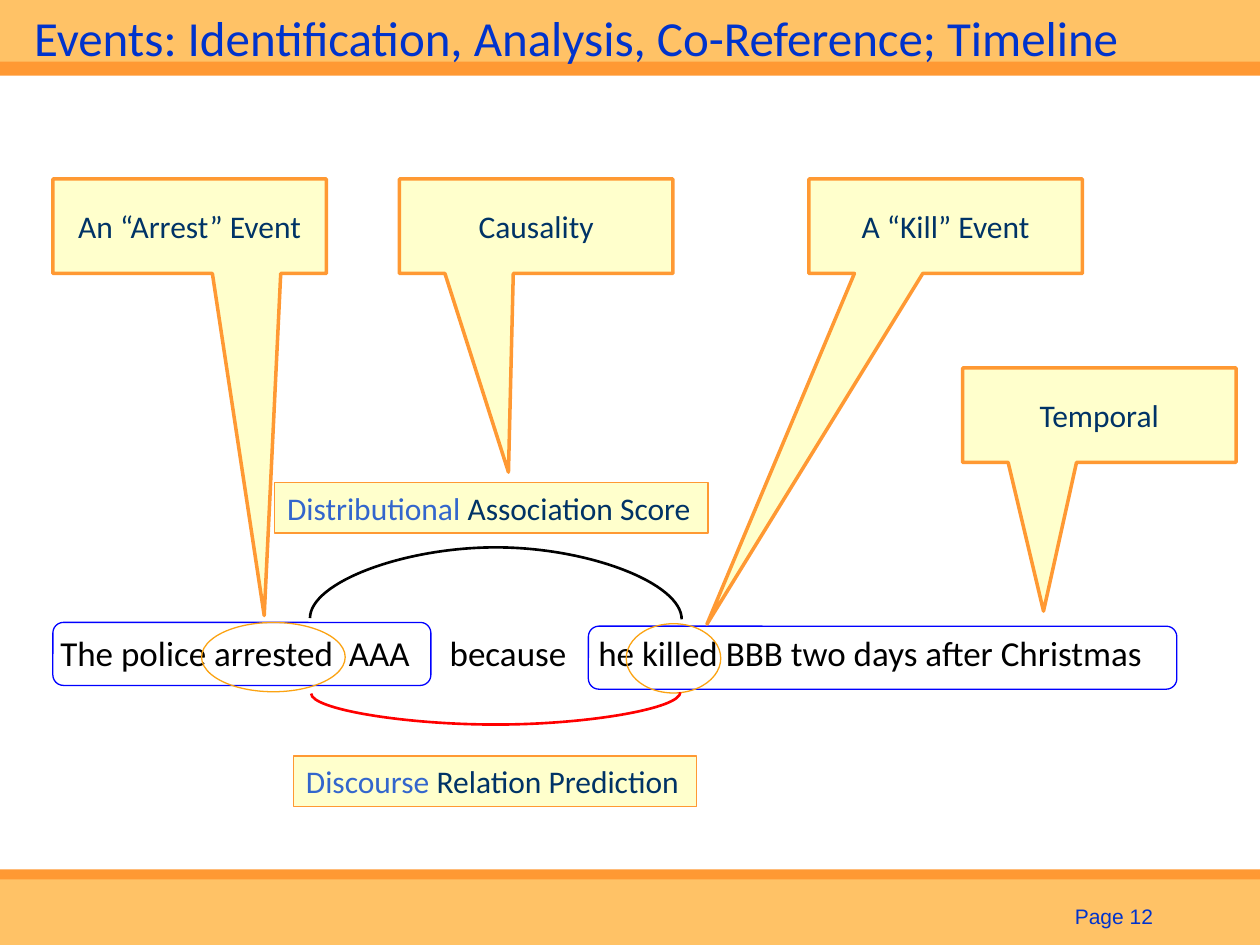
from pptx import Presentation
from pptx.dml.color import RGBColor
from pptx.enum import shapes, text
from pptx.oxml import ns, xmlchemy
from pptx.util import Inches, Pt

ORANGE = RGBColor(0xFF, 0x99, 0x33)
LIGHT_ORANGE = RGBColor(0xFF, 0xC2, 0x66)
GOLD = RGBColor(0xFB, 0xA3, 0x13)
CREAM = RGBColor(0xFF, 0xFF, 0xCC)
TITLE_BLUE = RGBColor(0x00, 0x33, 0xCC)
SPAN_BLUE = RGBColor(0x00, 0x00, 0xFF)
LABEL_BLUE = RGBColor(0x33, 0x66, 0xCC)
NAVY = RGBColor(0x00, 0x33, 0x66)
RED = RGBColor(0xFF, 0x00, 0x00)
BLACK = RGBColor(0x00, 0x00, 0x00)

KIND = shapes.MSO_SHAPE
ALIGN = text.PP_ALIGN
ANCHOR = text.MSO_ANCHOR

# Content: positions and sizes in inches
TITLE = "Events: Identification, Analysis, Co-Reference; Timeline"
SENTENCE = "The police arrested\tAAA\tbecause\the killed BBB two days after Christmas"
SENTENCE_TABS = [2.29, 3.09, 4.27]
PAGE_NUMBER = "Page 12"
BANDS = [  # top, height, colour
    (6.9, 0.6, ORANGE), (0, 0.6, ORANGE),
    (0, 0.49, LIGHT_ORANGE), (6.98, 0.52, LIGHT_ORANGE),
]
MARKS = [  # kind, left, top, width, height, line colour
    (KIND.ROUNDED_RECTANGLE, 0.42, 4.94, 3, 0.5, SPAN_BLUE),
    (KIND.ROUNDED_RECTANGLE, 4.67, 4.97, 4.67, 0.5, SPAN_BLUE),
    (KIND.OVAL, 1.6, 4.94, 1.14, 0.55, GOLD),
    (KIND.OVAL, 4.97, 4.95, 0.75, 0.55, GOLD),
]
CALLOUT_SIZE = (2.17, 0.75)
CALLOUTS = [  # words, left, top, tip offset as a share of the size
    ("A “Kill” Event", 6.42, 1.42, (-0.873, 4.212)),
    ("An “Arrest” Event", 0.42, 1.42, (0.273, 4.12)),
    ("Causality", 3.17, 1.42, (-0.101, 2.603)),
    ("Temporal", 7.64, 2.92, (-0.204, 2.074)),
]
LABELS = [  # first words, other words, left, top, width
    ("Distributional ", "Association Score", 2.18, 3.83, 3.44),
    ("Discourse ", "Relation Prediction", 2.33, 6, 3.2),
]
ARCS = [  # left, right, end height, bulge (negative is upward), colour
    (2.46, 5.41, 4.91, -0.57, BLACK),
    (2.47, 5.4, 5.5, 0.25, RED),
]
ARC_DEPTH = 0.01


def add_span(para, words, size, color, font="Calibri"):
    span = para.add_run()
    span.text = words
    span.font.name, span.font.size = font, Pt(size)
    span.font.color.rgb = color


def add_box(page, kind, place, fill=None, line=None, weight=0.75):
    box = page.shapes.add_shape(kind, *map(Inches, place))
    box.shadow.inherit = False
    if fill is None:
        box.fill.background()
    else:
        box.fill.solid()
        box.fill.fore_color.rgb = fill
    if line is None:
        box.line.fill.background()
    else:
        box.line.color.rgb = line
        box.line.width = Pt(weight)
    return box


def add_text(page, place, anchor):
    box = page.shapes.add_textbox(*map(Inches, place))
    box.text_frame.word_wrap = True
    box.text_frame.vertical_anchor = anchor
    return box.text_frame.paragraphs[0]


def add_arc(page, left, right, level, bulge, color):
    # A thin upright curve, turned a quarter so that it spans left to right
    length, middle = right - left, (left + right) / 2
    x, y = middle - ARC_DEPTH / 2, level - length / 2
    arc = page.shapes.add_connector(
        shapes.MSO_CONNECTOR.CURVE,
        *map(Inches, (x, y, x + ARC_DEPTH, y + length)))
    arc.line.color.rgb = color
    arc.line.width = Pt(1.5)
    properties = arc.element.spPr
    frame = properties.find(ns.qn("a:xfrm"))
    frame.set("flipH", "1")
    if bulge < 0:
        frame.set("rot", str(270 * 60000))
    else:
        frame.set("rot", str(90 * 60000))
        frame.set("flipV", "1")
    geometry = properties.find(ns.qn("a:prstGeom"))
    guides = geometry.find(ns.qn("a:avLst"))
    if guides is None:
        guides = xmlchemy.OxmlElement("a:avLst")
        geometry.append(guides)
    guide = xmlchemy.OxmlElement("a:gd")
    guide.set("name", "adj1")
    guide.set("fmla", f"val {round(-abs(bulge) / ARC_DEPTH * 100000)}")
    guides.append(guide)
    properties.append(xmlchemy.OxmlElement("a:effectLst"))


def main():
    deck = Presentation()
    deck.slide_width, deck.slide_height = Inches(10), Inches(7.5)
    page = deck.slides.add_slide(deck.slide_layouts[5])

    # Header and footer bands, with the title in front
    for top, height, color in BANDS:
        add_box(page, KIND.RECTANGLE, (0, top, 10, height), color)
    title = page.shapes.title
    title.left, title.top = Inches(0.17), Inches(0)
    title.width, title.height = Inches(9), Inches(0.58)
    title.text_frame.auto_size = text.MSO_AUTO_SIZE.NONE
    title.text_frame.vertical_anchor = ANCHOR.MIDDLE
    para = title.text_frame.paragraphs[0]
    para.alignment = ALIGN.LEFT
    add_span(para, TITLE, 28, TITLE_BLUE)
    title.element.getparent().append(title.element)

    # Sentence with its marked spans
    para = add_text(page, (0.38, 4.96, 8.88, 0.44), ANCHOR.TOP)
    stops = xmlchemy.OxmlElement("a:tabLst")
    for position in SENTENCE_TABS:
        stop = xmlchemy.OxmlElement("a:tab")
        stop.set("pos", str(Inches(position)))
        stop.set("algn", "l")
        stops.append(stop)
    para._p.get_or_add_pPr().append(stops)
    add_span(para, SENTENCE, 20, BLACK)
    for kind, *place, color in MARKS:
        add_box(page, kind, place, line=color)

    # Callouts
    for words, left, top, tip in CALLOUTS:
        box = add_box(page, KIND.RECTANGULAR_CALLOUT,
                      (left, top, *CALLOUT_SIZE), CREAM, ORANGE, 2)
        box.adjustments[0], box.adjustments[1] = tip
        box.text_frame.vertical_anchor = ANCHOR.MIDDLE
        para = box.text_frame.paragraphs[0]
        para.alignment = ALIGN.CENTER
        add_span(para, words, 18, NAVY)

    # Score labels
    for first, rest, left, top, width in LABELS:
        box = add_box(page, KIND.RECTANGLE, (left, top, width, 0.4), CREAM, ORANGE)
        box.text_frame.word_wrap = False
        box.text_frame.vertical_anchor = ANCHOR.TOP
        para = box.text_frame.paragraphs[0]
        para.alignment = ALIGN.LEFT
        add_span(para, first, 18, LABEL_BLUE)
        add_span(para, rest, 18, NAVY)

    # Arcs between the two events
    for arc in ARCS:
        add_arc(page, *arc)

    # Page number
    para = add_text(page, (8.25, 7.17, 1, 0.25), ANCHOR.BOTTOM)
    para.alignment = ALIGN.RIGHT
    add_span(para, PAGE_NUMBER, 12, TITLE_BLUE, "Arial")

    deck.save("out.pptx")


if __name__ == "__main__":
    main()
